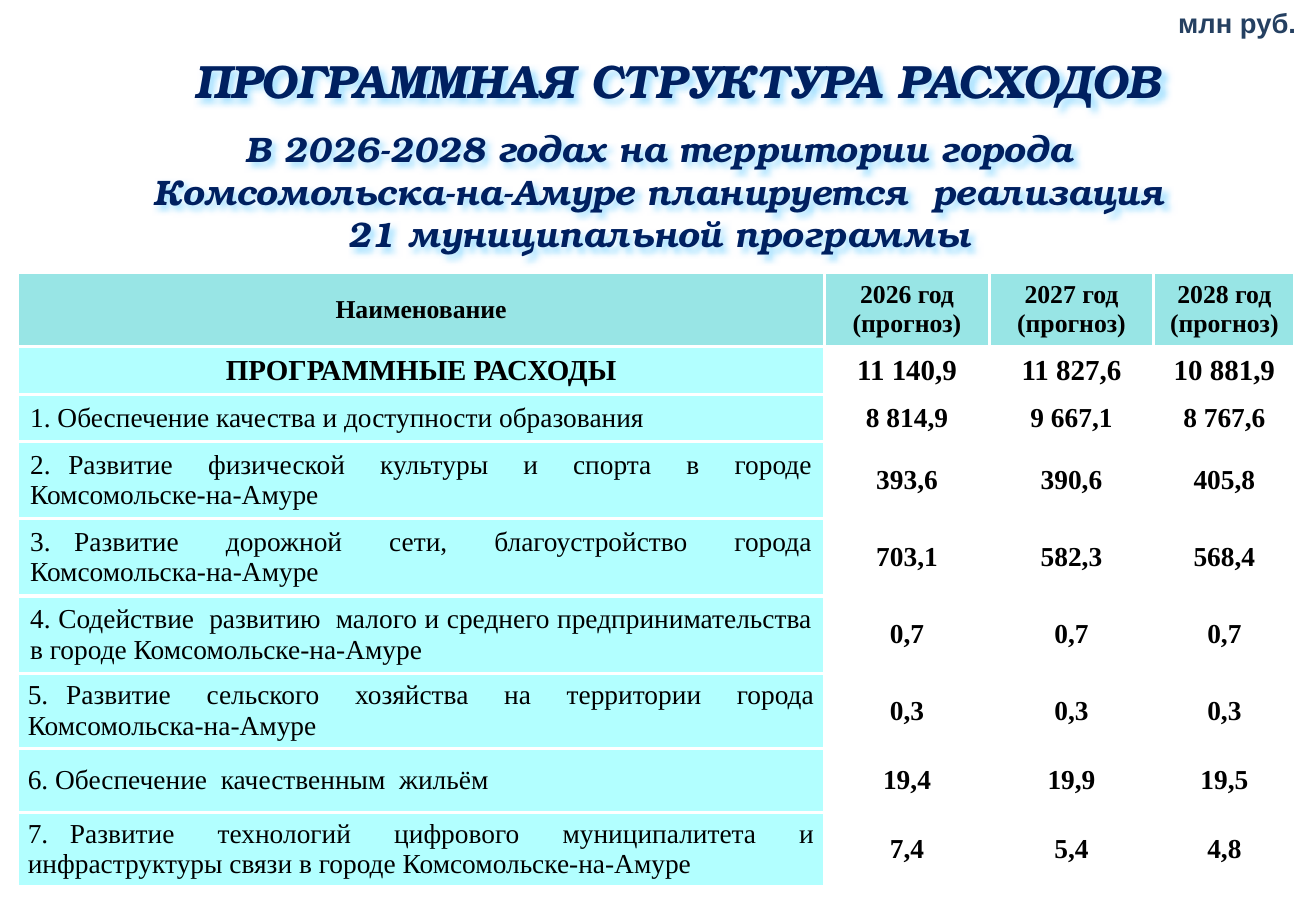
from dataclasses import dataclass

from lxml.etree import SubElement
from pptx import Presentation
from pptx.dml.color import RGBColor
from pptx.enum.text import MSO_ANCHOR as Anchor, MSO_AUTO_SIZE as Fit, PP_ALIGN as Align
from pptx.oxml import parse_xml
from pptx.oxml.ns import nsdecls, qn
from pptx.util import Inches, Pt

NAVY = RGBColor(0x00, 0x20, 0x60)
SLATE = RGBColor(0x25, 0x40, 0x61)
BLACK = RGBColor(0x00, 0x00, 0x00)
WHITE = RGBColor(0xFF, 0xFF, 0xFF)
TEAL = RGBColor(0x33, 0xCC, 0xCC)
CYAN = RGBColor(0x66, 0xFF, 0xFF)
GLOW = RGBColor(0x66, 0xCC, 0xFF)

SERIF = "Times New Roman"
BONUM = "TeX Gyre Bonum"
HANG = 0.38
WIDE = (0.11, 0.07)
TIGHT = (0.09, 0)


@dataclass
class Label:
    lines: list[str]
    box: tuple[float, float, float, float]
    pads: tuple[float, float]
    font: str
    size: float
    color: RGBColor
    align: Align = Align.CENTER
    anchor: Anchor = Anchor.TOP
    fit: Fit = Fit.NONE
    wrap: bool = True
    fancy: bool = True


@dataclass
class Row:
    name: str
    values: tuple[str, str, str]
    height: float
    pads: tuple[float, float] = WIDE


@dataclass
class Style:
    size: float
    bold: bool = True
    align: Align = Align.CENTER
    hang: bool = False
    fill: RGBColor | None = None
    pads: tuple[float, float] = WIDE


LABELS = [
    Label(["ПРОГРАММНАЯ СТРУКТУРА РАСХОДОВ"], (1.15, 0, 9.4, 1.05), (0.12, 0.12),
          BONUM, 29, NAVY, anchor=Anchor.BOTTOM),
    Label(["В 2026-2028 годах на территории города",
           "Комсомольска-на-Амуре планируется  реализация",
           "21 муниципальной программы"],
          (0.16, 1.05, 11.06, 1.21), (0.1, 0.05), BONUM, 22, NAVY,
          fit=Fit.SHAPE_TO_FIT_TEXT),
    Label(["млн руб."], (10.05, -0.01, 1.28, 0.41), (0.12, 0.06), "Arial", 17, SLATE,
          align=Align.LEFT, fit=Fit.SHAPE_TO_FIT_TEXT, wrap=False, fancy=False),
]

WIDTHS = (6.97, 1.42, 1.42, 1.22)
YEARS = ("2026 год (прогноз)", "2027 год (прогноз)", "2028 год (прогноз)")
ROWS = [
    Row("Наименование", YEARS, 0.64),
    Row("ПРОГРАММНЫЕ РАСХОДЫ", ("11 140,9", "11 827,6", "10 881,9"), 0.4),
    Row("1. Обеспечение качества и доступности образования",
        ("8 814,9", "9 667,1", "8 767,6"), 0.4),
    Row("2. Развитие  физической  культуры  и  спорта  в  городе Комсомольске-на-Амуре",
        ("393,6", "390,6", "405,8"), 0.59),
    Row("3. Развитие  дорожной  сети,  благоустройство  города Комсомольска-на-Амуре",
        ("703,1", "582,3", "568,4"), 0.66),
    Row("4. Содействие  развитию  малого и среднего предпринимательства "
        "в городе Комсомольске-на-Амуре", ("0,7", "0,7", "0,7"), 0.66),
    Row("5. Развитие  сельского  хозяйства  на  территории  города Комсомольска-на-Амуре",
        ("0,3", "0,3", "0,3"), 0.65, TIGHT),
    Row("6. Обеспечение  качественным  жильём", ("19,4", "19,9", "19,5"), 0.55, TIGHT),
    Row("7. Развитие  технологий  цифрового  муниципалитета  и "
        "инфраструктуры связи в городе Комсомольске-на-Амуре",
        ("7,4", "5,4", "4,8"), 0.64, TIGHT),
]


def set_font(para, name: str, size: float, color: RGBColor, bold: bool,
             slant: bool = False) -> None:
    font = para.font
    font.name, font.size, font.bold, font.italic = name, Pt(size), bold, slant
    font.color.rgb = color


def set_pads(item, pads: tuple[float, float]) -> None:
    """Set the side and the top and bottom margins of a cell or text frame."""
    item.margin_left = item.margin_right = Inches(pads[0])
    item.margin_top = item.margin_bottom = Inches(pads[1])


def add_glow(shape) -> None:
    shape._element.spPr.append(parse_xml(
        f'<a:effectLst {nsdecls("a")}><a:outerShdw blurRad="50800" dist="38100" '
        f'dir="2700000" algn="tl" rotWithShape="0"><a:srgbClr val="{GLOW}">'
        '<a:alpha val="60000"/></a:srgbClr></a:outerShdw></a:effectLst>'))


def add_label(slide, label: Label) -> None:
    shape = slide.shapes.add_textbox(*map(Inches, label.box))
    frame = shape.text_frame
    frame.word_wrap, frame.auto_size = label.wrap, label.fit
    frame.vertical_anchor = label.anchor
    set_pads(frame, label.pads)
    frame.text = "\n".join(label.lines)
    for para in frame.paragraphs:
        para.alignment = label.align
        set_font(para, label.font, label.size, label.color, True, label.fancy)
    if label.fancy:
        add_glow(shape)


def add_edges(cell) -> None:
    """Draw the white rules on all four sides of a cell."""
    props = cell._tc.get_or_add_tcPr()
    for side in "LRTB":
        line = SubElement(props, qn(f"a:ln{side}"), w=str(Pt(2.25)))
        solid = SubElement(line, qn("a:solidFill"))
        SubElement(solid, qn("a:srgbClr"), val=str(WHITE))


def fill_cell(cell, text: str, style: Style) -> None:
    cell.text = text
    cell.vertical_anchor = Anchor.MIDDLE
    set_pads(cell, style.pads)
    para = cell.text_frame.paragraphs[0]
    para.alignment = style.align
    if style.hang:
        props = para._p.get_or_add_pPr()
        props.set("marL", str(Inches(HANG)))
        props.set("indent", str(-Inches(HANG)))
    set_font(para, SERIF, style.size, BLACK, style.bold)
    add_edges(cell)
    if style.fill is None:
        cell.fill.background()
        return
    cell.fill.solid()
    cell.fill.fore_color.rgb = style.fill
    color = cell._tc.tcPr.find(qn("a:solidFill")).find(qn("a:srgbClr"))
    SubElement(color, qn("a:alpha"), val="50000")


def get_styles(index: int, row: Row) -> tuple[Style, Style]:
    """Return the styles of the name cell and of the value cells."""
    if index == 0:
        return Style(16, hang=True, fill=TEAL), Style(16, fill=TEAL)
    if index == 1:
        return Style(18, hang=True, fill=CYAN), Style(18)
    name = Style(17, False, Align.JUSTIFY, fill=CYAN, pads=row.pads)
    return name, Style(17, hang=True)


def add_budget(slide) -> None:
    table = slide.shapes.add_table(
        len(ROWS), len(WIDTHS), Inches(0.15), Inches(2.35),
        Inches(sum(WIDTHS)), Inches(sum(row.height for row in ROWS))).table
    table.first_row = table.horz_banding = False
    for col, width in zip(table.columns, WIDTHS):
        col.width = Inches(width)
    for index, row in enumerate(ROWS):
        table.rows[index].height = Inches(row.height)
        name, value = get_styles(index, row)
        fill_cell(table.cell(index, 0), row.name, name)
        for col, text in enumerate(row.values, 1):
            fill_cell(table.cell(index, col), text, value)


def main() -> None:
    deck = Presentation()
    deck.slide_width, deck.slide_height = Inches(11.36), Inches(7.93)
    slide = deck.slides.add_slide(deck.slide_layouts[6])
    add_budget(slide)
    for label in LABELS:
        add_label(slide, label)
    deck.save("out.pptx")


if __name__ == "__main__":
    main()
